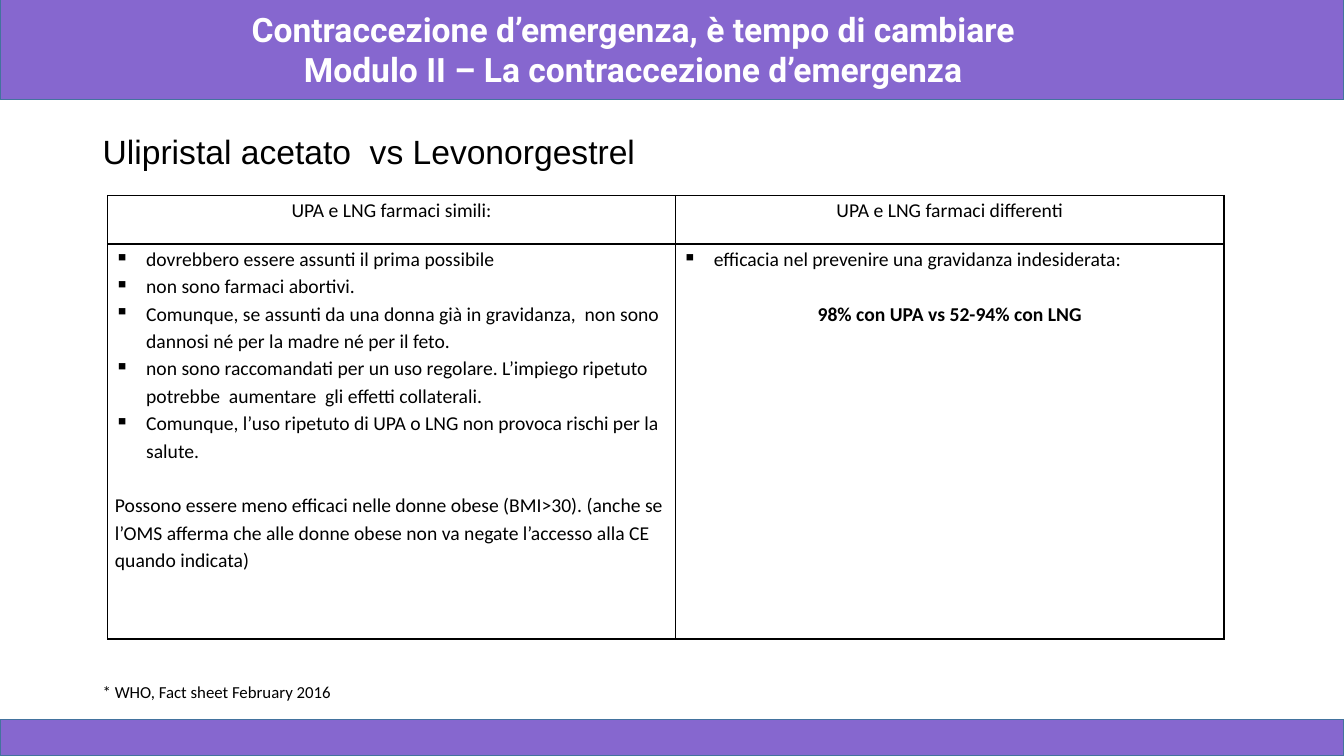
from lxml.etree import SubElement
from pptx import Presentation
from pptx.dml.color import RGBColor
from pptx.enum.shapes import MSO_SHAPE
from pptx.enum.text import MSO_ANCHOR, PP_ALIGN
from pptx.oxml.ns import qn
from pptx.util import Inches, Pt

PURPLE, BAND_LINE, BLACK, WHITE = "8667CF", "43739E", "000000", "FFFFFF"
BLANK_LINE = 19.6  # points: one table text line

HEADERS = ["UPA e LNG farmaci simili:", "UPA e LNG farmaci differenti"]
SIMILARITIES = [
    "dovrebbero essere assunti il prima possibile",
    "non sono farmaci abortivi.",
    "Comunque, se assunti da una donna già in gravidanza,  non sono dannosi né per la madre né per il feto.",
    "non sono raccomandati per un uso regolare. L’impiego ripetuto potrebbe  aumentare  gli effetti collaterali.",
    "Comunque, l’uso ripetuto di UPA o LNG non provoca rischi per la salute.",
]
OBESITY_NOTE = (
    "Possono essere meno efficaci nelle donne obese (BMI>30). (anche se l’OMS afferma "
    "che alle donne obese non va negate l’accesso alla CE quando indicata)"
)
DIFFERENCE = "efficacia nel prevenire una gravidanza indesiderata:"
EFFICACY = "98% con UPA vs 52-94% con LNG"


def color(value):
    return RGBColor.from_string(value)


def set_attributes(target, values):
    for name, value in values.items():
        setattr(target, name, value)


def add_bullet(paragraph):
    properties = paragraph._p.get_or_add_pPr()
    properties.set("marL", str(Inches(0.31)))
    properties.set("indent", str(-Inches(0.31)))
    SubElement(properties, qn("a:buChar"), char="▪")


def write_paragraphs(text_frame, entries, font, layout):
    """Write (text, options) entries; options are bullet, bold and paragraph attributes."""
    for index, (text, options) in enumerate(entries):
        paragraph = text_frame.paragraphs[0] if index == 0 else text_frame.add_paragraph()
        options = {**layout, **options}
        bold = options.pop("bold", font.get("bold", False))
        if options.pop("bullet", False):
            add_bullet(paragraph)
        set_attributes(paragraph, options)
        run = paragraph.add_run()
        run.text = text
        text_color = font.get("color", BLACK)
        set_attributes(run.font, {"name": font["name"], "size": Pt(font["size"]), "bold": bold})
        run.font.color.rgb = color(text_color)


def add_band(slide, top, height):
    band = slide.shapes.add_shape(
        MSO_SHAPE.RECTANGLE, 0, Inches(top), Inches(13.33), Inches(height))
    band.shadow.inherit = False
    band.fill.solid()
    band.fill.fore_color.rgb = color(PURPLE)
    band.line.color.rgb = color(BAND_LINE)
    band.line.width = Pt(1)


def add_text(slide, box, lines, font, anchor=MSO_ANCHOR.MIDDLE, **layout):
    text_frame = slide.shapes.add_textbox(*map(Inches, box)).text_frame
    set_attributes(text_frame, {"word_wrap": True, "vertical_anchor": anchor})
    write_paragraphs(text_frame, [(line, {}) for line in lines], font, layout)


def add_borders(cell):
    properties = cell._tc.get_or_add_tcPr()
    for side in ("lnL", "lnR", "lnT", "lnB"):
        border = SubElement(properties, qn(f"a:{side}"), w=str(Pt(1)))
        fill = SubElement(border, qn("a:solidFill"))
        SubElement(fill, qn("a:srgbClr"), val=BLACK)


def fill_cell(cell, entries):
    add_borders(cell)
    cell.fill.background()
    set_attributes(cell, {
        "margin_left": Inches(0.07), "margin_right": Inches(0.07),
        "margin_top": 0, "margin_bottom": 0,
    })
    write_paragraphs(cell.text_frame, entries, {"name": "Calibri", "size": 14},
                     {"line_spacing": 1.15})


def add_comparison_table(slide, rows):
    table = slide.shapes.add_table(
        2, 2, Inches(1.07), Inches(1.94), Inches(11.07), Inches(4.4)).table
    set_attributes(table, {"first_row": False, "horz_banding": False})
    for column, width in zip(table.columns, (5.63, 5.44)):
        column.width = Inches(width)
    for row, height, contents in zip(table.rows, (0.48, 3.92), rows):
        row.height = Inches(height)
        for cell, entries in zip(row.cells, contents):
            fill_cell(cell, entries)


def main():
    presentation = Presentation()
    presentation.slide_width = Inches(13.33)
    presentation.slide_height = Inches(7.5)
    slide = presentation.slides.add_slide(presentation.slide_layouts[6])

    add_band(slide, -0.03, 1.02)
    add_band(slide, 7.14, 0.36)
    add_text(slide, (0.53, 0.29, 11.5, 0.4),
             ["Contraccezione d’emergenza, è tempo di cambiare",
              "Modulo II – La contraccezione d’emergenza"],
             {"name": "Roboto", "size": 24, "color": WHITE, "bold": True},
             alignment=PP_ALIGN.CENTER)
    add_text(slide, (0.92, 1.2, 11.5, 0.65), ["Ulipristal acetato  vs Levonorgestrel"],
             {"name": "Arial", "size": 24}, line_spacing=0.9)

    centered = {"alignment": PP_ALIGN.CENTER}
    after_gap = {"space_before": Pt(BLANK_LINE)}
    bullet = {"bullet": True}
    add_comparison_table(slide, [
        [[(header, centered)] for header in HEADERS],
        [
            [(text, bullet) for text in SIMILARITIES] + [(OBESITY_NOTE, after_gap)],
            [(DIFFERENCE, bullet), (EFFICACY, {**centered, **after_gap, "bold": True})],
        ],
    ])
    add_text(slide, (0.92, 6.71, 11.94, 0.3), ["* WHO, Fact sheet February 2016"],
             {"name": "Calibri", "size": 12}, anchor=MSO_ANCHOR.TOP)
    presentation.save("out.pptx")


if __name__ == "__main__":
    main()
